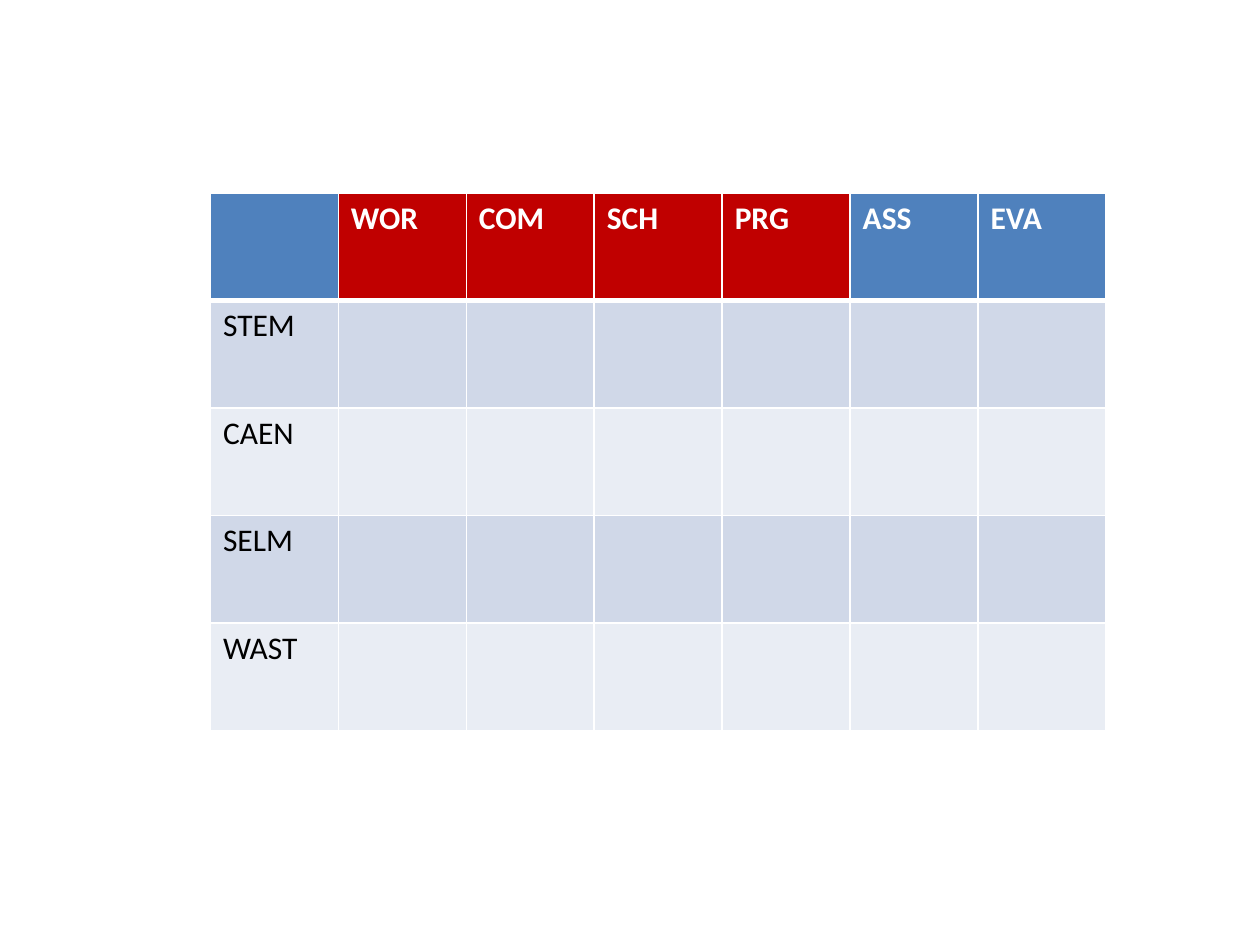
from lxml.etree import SubElement
from pptx import Presentation
from pptx.dml.color import RGBColor
from pptx.oxml.ns import qn
from pptx.util import Inches, Pt

COLORS = {
    "white": "FFFFFF",
    "black": "000000",
    "blue": "4F81BD",
    "red": "C00000",
    "dark_band": "D0D8E8",
    "light_band": "E9EDF4",
}
HEADERS = ["", "WOR", "COM", "SCH", "PRG", "ASS", "EVA"]
HIGHLIGHTED = {"WOR", "COM", "SCH", "PRG"}
ROW_LABELS = ["STEM", "CAEN", "SELM", "WAST"]


def write_text(cell, text, color="black", bold=False, size=18, font="Calibri"):
    """Write one formatted run into a cell."""
    run = cell.text_frame.paragraphs[0].add_run()
    run.text = text
    run.font.name = font
    run.font.size = Pt(size)
    run.font.bold = bold
    run.font.color.rgb = RGBColor.from_string(COLORS[color])


def style_cell(cell, fill, top=1, bottom=1):
    """Give a cell white borders, with widths in points, and a solid fill."""
    properties = cell._tc.get_or_add_tcPr()
    for tag, width in (("lnL", 1), ("lnR", 1), ("lnT", top), ("lnB", bottom)):
        line = SubElement(properties, qn(f"a:{tag}"), w=str(Pt(width)))
        solid = SubElement(line, qn("a:solidFill"))
        SubElement(solid, qn("a:srgbClr"), val=COLORS["white"])
    cell.fill.solid()
    cell.fill.fore_color.rgb = RGBColor.from_string(COLORS[fill])


def add_grid(slide, left, top, width, height):
    """Place the table of row labels against column headers in the given box."""
    rows, columns = len(ROW_LABELS) + 1, len(HEADERS)
    table = slide.shapes.add_table(rows, columns, left, top, width, height).table
    for column, header in enumerate(HEADERS):
        cell = table.cell(0, column)
        style_cell(cell, "red" if header in HIGHLIGHTED else "blue", bottom=3)
        if header:
            write_text(cell, header, color="white", bold=True)
    for row, label in enumerate(ROW_LABELS, start=1):
        band = "dark_band" if row % 2 else "light_band"
        for column in range(columns):
            style_cell(table.cell(row, column), band, top=3 if row == 1 else 1)
        write_text(table.cell(row, 0), label)


def main():
    """Build the slide and save it."""
    presentation = Presentation()
    presentation.slide_width = Inches(10)
    presentation.slide_height = Inches(7.5)
    slide = presentation.slides.add_slide(presentation.slide_layouts[6])
    add_grid(slide, Inches(1.67), Inches(1.53), Inches(7.11), Inches(4.27))
    presentation.save("out.pptx")


if __name__ == "__main__":
    main()
